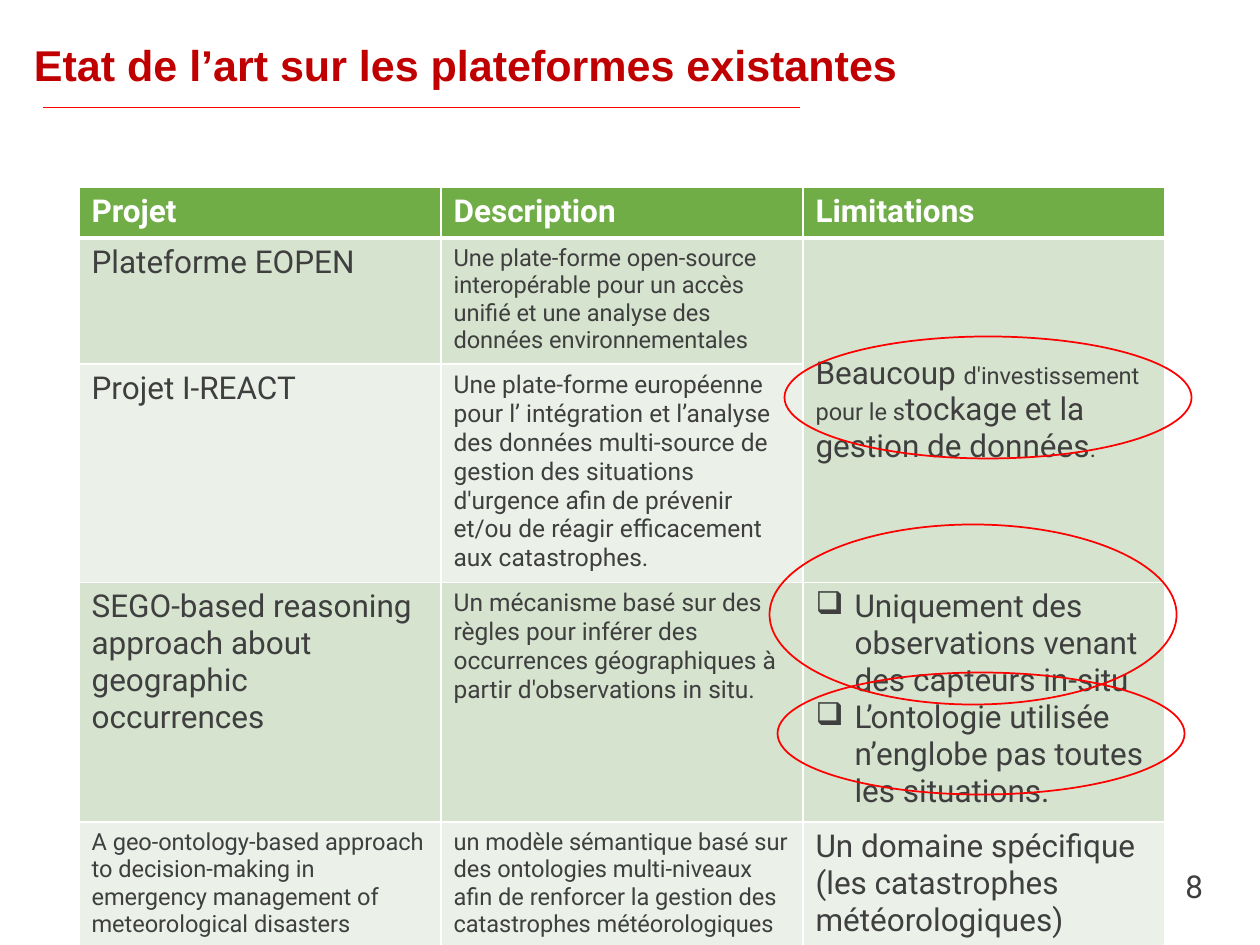
from lxml import etree
from pptx import Presentation, util as u
from pptx.dml.color import RGBColor
from pptx.enum import shapes, text
from pptx.oxml.ns import qn

PX = 914400 / 126
RED = RGBColor(0xFF, 0, 0)
CRIMSON = RGBColor(0xC0, 0, 0)
WHITE = RGBColor(0xFF, 0xFF, 0xFF)
GREY = RGBColor(0x3F, 0x3F, 0x3F)
GREEN = RGBColor(0x70, 0xAD, 0x47)
BANDS = (RGBColor(0xD5, 0xE3, 0xCF), RGBColor(0xEB, 0xF1, 0xE9))

HEAD = ("Projet", "Description", "Limitations")
# Each cell is a list of paragraphs, each paragraph a list of (text, size)
ROWS = (
    ([[("Plateforme EOPEN", 18)]],
     [[("Une plate-forme open-source interopérable pour un accès unifié et "
        "une analyse des données environnementales", 13.5)]],
     [[("Beaucoup ", 18), ("d'investissement pour le s", 13.5),
       ("tockage et la gestion de données", 18), (".", 13.5)]]),
    ([[("Projet I-REACT", 18)]],
     [[("Une plate-forme européenne pour l’ intégration et l’analyse des "
        "données multi-source de gestion des situations d'urgence afin de "
        "prévenir et/ou de réagir efficacement aux catastrophes.", 14)]],
     None),
    ([[("SEGO-based reasoning approach about geographic occurrences", 18)]],
     [[("Un mécanisme basé sur des règles pour inférer des occurrences "
        "géographiques à partir d'observations in situ.", 14)]],
     [[("Uniquement des observations venant des capteurs in-situ", 18)],
      [("L’ontologie utilisée n’englobe pas toutes les situations.", 18)]]),
    ([[("A geo-ontology-based approach to decision-making in emergency "
        "management of meteorological disasters", 13.5)]],
     [[("un modèle sémantique basé sur des ontologies multi-niveaux afin de "
        "renforcer la gestion des catastrophes météorologiques", 13.5)]],
     [[("Un domaine spécifique (les catastrophes météorologiques)", 18)]]),
)
HEIGHTS = (51, 122, 216, 234, 123)
# Tall boxes, turned a quarter to lie flat
RINGS = ((927, 194, 122, 407), (920, 530, 122, 407), (883, 411, 180, 407))


def emu(*vals):
    return [u.Emu(round(v * PX)) for v in vals]


def style(font, size, color, bold=False, name="Roboto"):
    font.name, font.size, font.bold = name, u.Pt(size), bold
    font.color.rgb = color


def title(slide, x, y, w, h):
    frame = slide.shapes.add_textbox(*emu(x, y, w, h)).text_frame
    frame.word_wrap = True
    frame.margin_left = frame.margin_right = 0
    frame.margin_top = frame.margin_bottom = 0
    para = frame.paragraphs[0]
    para.text = "Etat de l’art sur les plateformes existantes"
    para.line_spacing = 0.9
    style(para.font, 24.6, CRIMSON, True, "Arial")
    # Rule under the title
    rule = slide.shapes.add_connector(
        shapes.MSO_CONNECTOR.STRAIGHT, *emu(x + 766, y + 63, x + 9, y + 63))
    rule.line.color.rgb, rule.line.width = RED, u.Pt(0.5)
    etree.SubElement(rule._element.spPr, qn("a:effectLst"))


def edge(cell, bottom):
    props = cell._tc.get_or_add_tcPr()
    for side in "LRTB":
        width = bottom if side == "B" else 1
        line = etree.SubElement(props, qn("a:ln" + side), w=str(u.Pt(width)))
        fill = etree.SubElement(line, qn("a:solidFill"))
        etree.SubElement(fill, qn("a:srgbClr"), val=str(WHITE))


def bullet(para):
    props = para._p.get_or_add_pPr()
    indent = emu(39)[0]
    props.set("marL", str(indent))
    props.set("indent", str(-indent))
    etree.SubElement(props, qn("a:buChar"), char="❑")


def write(cell, paras, color, bold=False):
    frame = cell.text_frame
    for i, parts in enumerate(paras):
        para = frame.add_paragraph() if i else frame.paragraphs[0]
        if len(paras) > 1:
            bullet(para)
        for words, size in parts:
            run = para.add_run()
            run.text = words
            style(run.font, size, color, bold)


def grid(slide, x, y, w):
    table = slide.shapes.add_table(
        len(HEIGHTS), len(HEAD), *emu(x, y, w, sum(HEIGHTS))).table
    for row, high in zip(table.rows, HEIGHTS):
        row.height = emu(high)[0]
    for col in table.columns:
        col.width = emu(w / len(HEAD))[0]
    # Header row
    for c, name in enumerate(HEAD):
        cell = table.cell(0, c)
        edge(cell, 3)
        cell.fill.solid()
        cell.fill.fore_color.rgb = GREEN
        write(cell, [[(name, 18)]], WHITE, True)
    # Body rows in two alternating tints
    for r, row in enumerate(ROWS, 1):
        for c, paras in enumerate(row):
            cell = table.cell(r, c)
            edge(cell, 1)
            cell.fill.solid()
            cell.fill.fore_color.rgb = BANDS[(r - 1) % 2]
            if paras:
                write(cell, paras, GREY)
    # One limitation shared by the first two projects
    shared = table.cell(1, 2)
    shared.merge(table.cell(2, 2))
    shared.vertical_anchor = text.MSO_ANCHOR.MIDDLE


def ring(slide, *box):
    oval = slide.shapes.add_shape(shapes.MSO_SHAPE.OVAL, *emu(*box))
    oval.rotation = 90
    oval.shadow.inherit = False
    oval.fill.background()
    oval.line.color.rgb, oval.line.width = RED, u.Pt(1)


def number(slide, x, y, w, h):
    frame = slide.shapes.add_textbox(*emu(x, y, w, h)).text_frame
    frame.word_wrap = False
    para = frame.paragraphs[0]
    para.text = "8"
    style(para.font, 18, GREY)


def main():
    deck = Presentation()
    deck.slide_width, deck.slide_height = emu(1260, 945)
    slide = deck.slides.add_slide(deck.slide_layouts[6])
    number(slide, 1173, 861, 78, 50)
    title(slide, 34, 44, 1086, 62)
    grid(slide, 79, 187, 1086)
    for box in RINGS:
        ring(slide, *box)
    deck.save("out.pptx")


if __name__ == "__main__":
    main()
